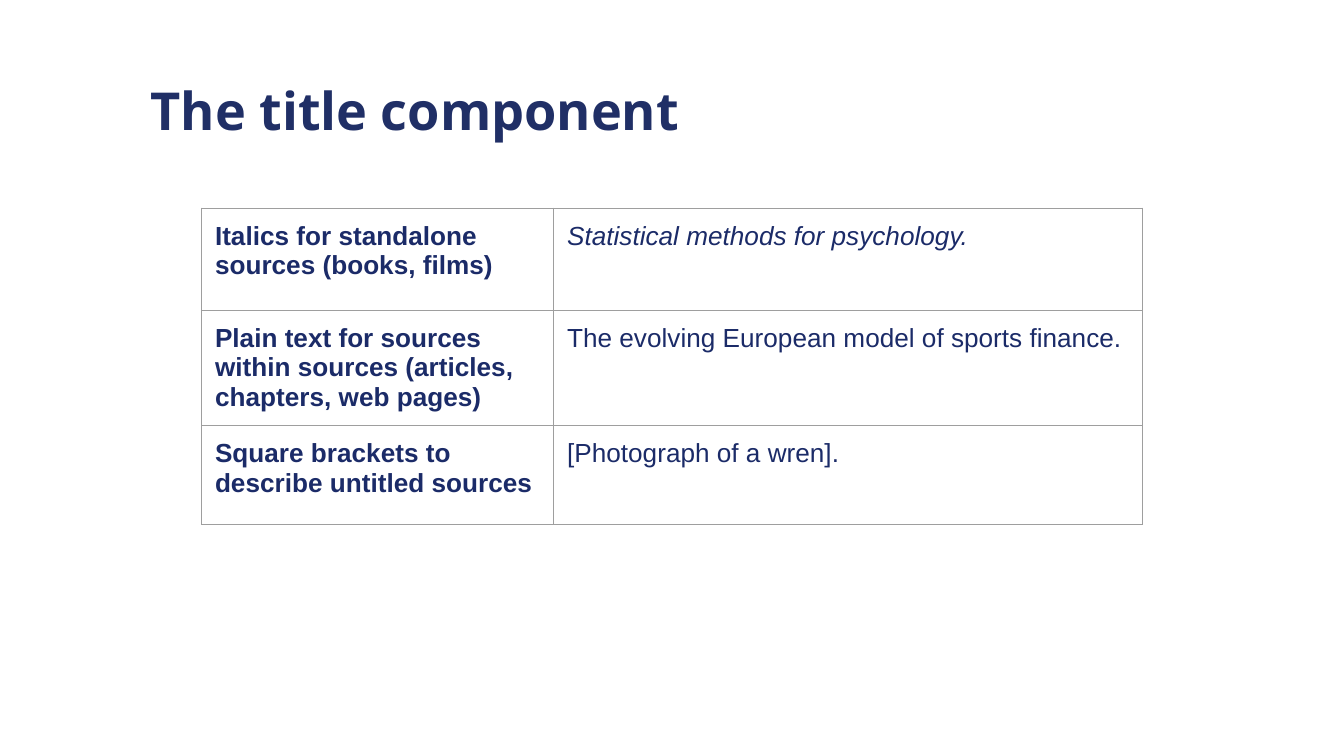
from pptx import Presentation
from pptx.dml.color import RGBColor
from pptx.enum.text import MSO_ANCHOR, MSO_AUTO_SIZE, PP_ALIGN
from pptx.oxml.xmlchemy import OxmlElement
from pptx.util import Inches, Pt

MIDDLE = MSO_ANCHOR.MIDDLE
TOP = MSO_ANCHOR.TOP
LEFT = PP_ALIGN.LEFT
NO_FIT = MSO_AUTO_SIZE.NONE

SLIDE_WIDTH = Inches(10)
SLIDE_HEIGHT = SLIDE_WIDTH * 9 // 16
INSET = Inches(0.1)
TITLE_BOX = (Inches(1.02), Inches(0.5), Inches(7.87), Inches(0.63))
TABLE_BOX = (Inches(1.5), Inches(1.55), Inches(7), Inches(2.4))
COLUMN_WEIGHTS = (2.62, 4.38)
ROW_HEIGHTS = (0.76, 0.77, 0.74)
TITLE_COLOR, TEXT_COLOR, BORDER_COLOR = "202F66", "1B2B68", "9E9E9E"
TITLE_RULES = [
    ("Italics for standalone sources (books, films)",
     "Statistical methods for psychology.", True),
    ("Plain text for sources within sources (articles, chapters, web pages)",
     "The evolving European model of sports finance.", False),
    ("Square brackets to describe untitled sources",
     "[Photograph of a wren].", False),
]


def color(hex_value):
    return RGBColor.from_string(hex_value)


def set_font(para, name, size, hex_value, bold=False, italic=False):
    para.alignment = LEFT
    font = para.font
    font.name, font.size = name, Pt(size)
    font.bold, font.italic = bold, italic
    font.color.rgb = color(hex_value)


def set_insets(box):
    box.margin_left = box.margin_right = INSET
    box.margin_top = box.margin_bottom = INSET


def set_borders(cell):
    properties = cell._tc.get_or_add_tcPr()
    for position, side in enumerate(("lnL", "lnR", "lnT", "lnB")):
        line = OxmlElement(f"a:{side}")
        line.set("w", str(Pt(0.75)))
        fill = OxmlElement("a:solidFill")
        shade = OxmlElement("a:srgbClr")
        shade.set("val", BORDER_COLOR)
        fill.append(shade)
        line.append(fill)
        properties.insert(position, line)


def place_title(page, box, text):
    title = page.shapes.title
    title.left, title.top, title.width, title.height = box
    frame = title.text_frame
    frame.text = text
    frame.word_wrap = True
    frame.auto_size = NO_FIT
    frame.vertical_anchor = MIDDLE
    set_insets(frame)
    set_font(frame.paragraphs[0], "Open Sans", 28, TITLE_COLOR, bold=True)


def fill_cell(cell, text, bold=False, italic=False):
    cell.text = text
    cell.vertical_anchor = TOP
    set_insets(cell)
    cell.fill.background()
    set_borders(cell)
    set_font(cell.text_frame.paragraphs[0], "Arial", 14, TEXT_COLOR, bold, italic)


def place_rules_table(page, box, rules):
    width = box[2]
    table = page.shapes.add_table(len(rules), len(COLUMN_WEIGHTS), *box).table
    table.first_row = table.horz_banding = False
    for column, weight in zip(table.columns, COLUMN_WEIGHTS):
        column.width = round(width * weight / sum(COLUMN_WEIGHTS))
    for row, height, (rule, example, italic) in zip(table.rows, ROW_HEIGHTS, rules):
        row.height = Inches(height)
        fill_cell(row.cells[0], rule, bold=True)
        fill_cell(row.cells[1], example, italic=italic)


def main():
    deck = Presentation()
    deck.slide_width, deck.slide_height = SLIDE_WIDTH, SLIDE_HEIGHT
    page = deck.slides.add_slide(deck.slide_layouts.get_by_name("Title Only"))
    place_title(page, TITLE_BOX, "The title component")
    place_rules_table(page, TABLE_BOX, TITLE_RULES)
    deck.save("out.pptx")


if __name__ == "__main__":
    main()
